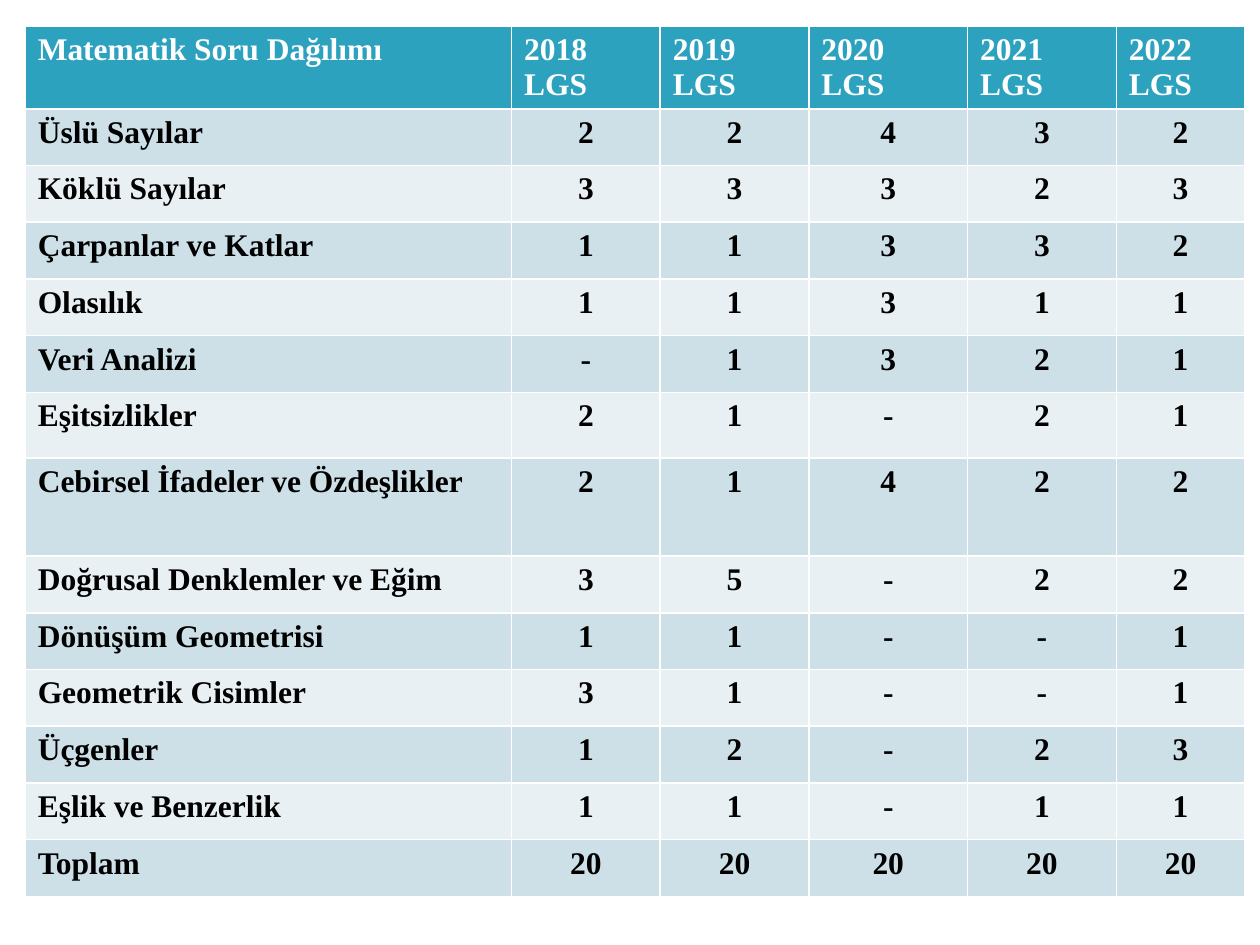
import pptx
import pptx.dml.color
import pptx.enum.text
import pptx.util

Inches = pptx.util.Inches
ALIGN = pptx.enum.text.PP_ALIGN

COLORS = {
    "header": "2DA2BF",
    "band_dark": "CDE0E8",
    "band_light": "E8F0F4",
    "header_text": "FFFFFF",
    "body_text": "000000",
}
FONT_NAME = "Times New Roman"
FONT_SIZE = 18

COLUMN_WIDTHS = [3.86, 1.18, 1.18, 1.26, 1.18, 1.02]
HEADER_HEIGHT = 0.64
ROW_HEIGHT = 0.45
TALL_ROWS = {"Eşitsizlikler": 0.52, "Cebirsel İfadeler ve Özdeşlikler": 0.78}

HEADER = ["Matematik Soru Dağılımı"] + [f"{year} LGS" for year in range(2018, 2023)]
QUESTION_COUNTS = [
    ("Üslü Sayılar", "2", "2", "4", "3", "2"),
    ("Köklü Sayılar", "3", "3", "3", "2", "3"),
    ("Çarpanlar ve Katlar", "1", "1", "3", "3", "2"),
    ("Olasılık", "1", "1", "3", "1", "1"),
    ("Veri Analizi", "-", "1", "3", "2", "1"),
    ("Eşitsizlikler", "2", "1", "-", "2", "1"),
    ("Cebirsel İfadeler ve Özdeşlikler", "2", "1", "4", "2", "2"),
    ("Doğrusal Denklemler ve Eğim", "3", "5", "-", "2", "2"),
    ("Dönüşüm Geometrisi", "1", "1", "-", "-", "1"),
    ("Geometrik Cisimler", "3", "1", "-", "-", "1"),
    ("Üçgenler", "1", "2", "-", "2", "3"),
    ("Eşlik ve Benzerlik", "1", "1", "-", "1", "1"),
    ("Toplam", "20", "20", "20", "20", "20"),
]


def color(name):
    return pptx.dml.color.RGBColor.from_string(COLORS[name])


def fill_cell(cell, text, fill, text_color, alignment):
    cell.fill.solid()
    cell.fill.fore_color.rgb = color(fill)
    cell.text_frame.text = text
    paragraph = cell.text_frame.paragraphs[0]
    paragraph.alignment = alignment
    font = paragraph.runs[0].font
    font.name = FONT_NAME
    font.size = pptx.util.Pt(FONT_SIZE)
    font.bold = True
    font.color.rgb = color(text_color)


def add_question_table(slide):
    heights = [HEADER_HEIGHT]
    heights += [TALL_ROWS.get(row[0], ROW_HEIGHT) for row in QUESTION_COUNTS]
    table = slide.shapes.add_table(
        len(heights), len(COLUMN_WIDTHS), Inches(0.2), Inches(0.21),
        Inches(sum(COLUMN_WIDTHS)), Inches(sum(heights)),
    ).table
    for column, width in zip(table.columns, COLUMN_WIDTHS):
        column.width = Inches(width)
    for row, height in zip(table.rows, heights):
        row.height = Inches(height)

    for index, text in enumerate(HEADER):
        alignment = ALIGN.LEFT if index else ALIGN.JUSTIFY
        fill_cell(table.cell(0, index), text, "header", "header_text", alignment)
    for row_index, values in enumerate(QUESTION_COUNTS, start=1):
        band = "band_dark" if row_index % 2 else "band_light"
        for index, text in enumerate(values):
            alignment = ALIGN.CENTER if index else ALIGN.LEFT
            fill_cell(table.cell(row_index, index), text, band, "body_text", alignment)


def main():
    presentation = pptx.Presentation()
    presentation.slide_width = Inches(10)
    presentation.slide_height = Inches(7.5)
    slide = presentation.slides.add_slide(presentation.slide_layouts[6])
    add_question_table(slide)
    presentation.save("out.pptx")


if __name__ == "__main__":
    main()
